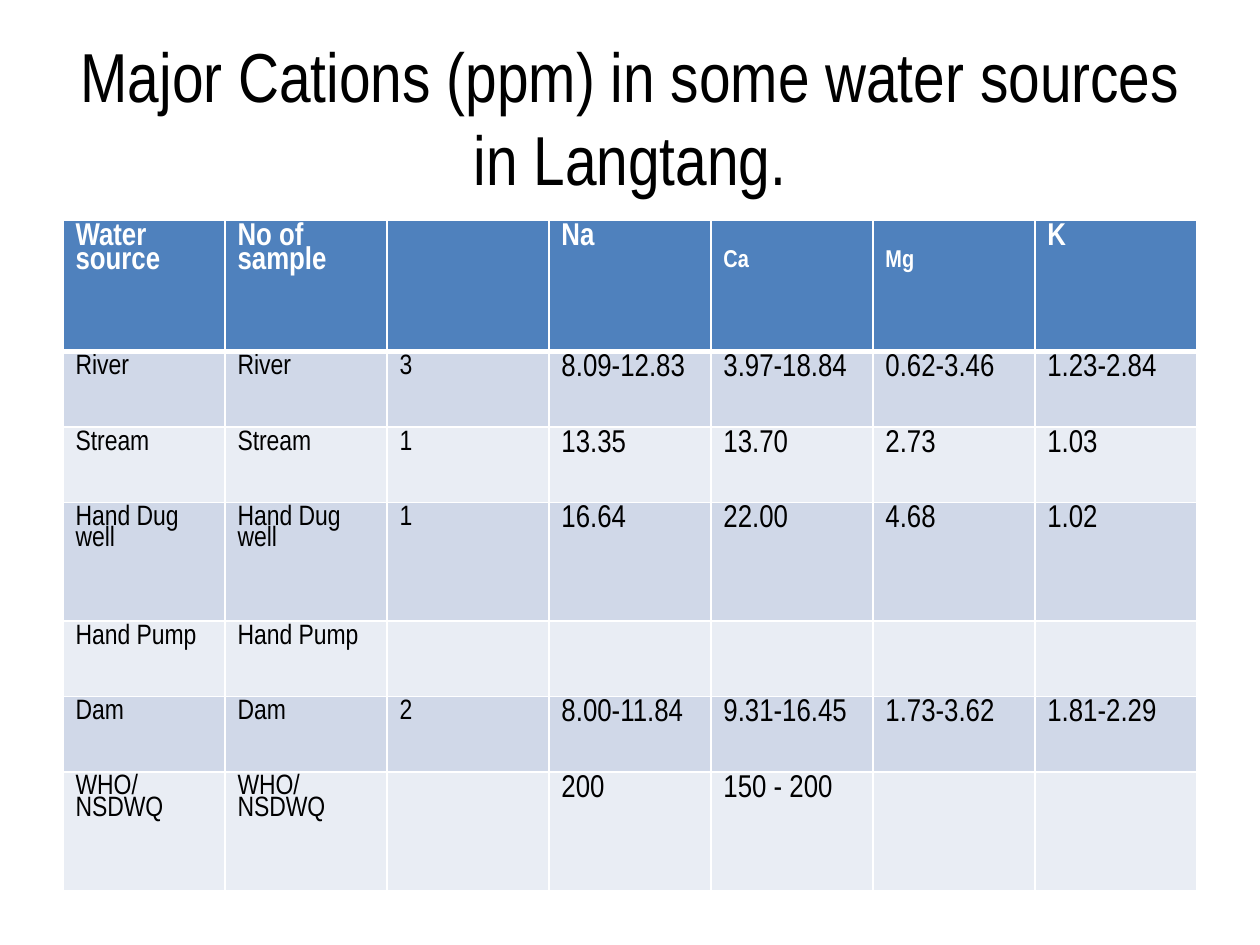
from lxml.etree import SubElement
from pptx import Presentation
from pptx.dml.color import RGBColor
from pptx.enum.text import MSO_ANCHOR, MSO_AUTO_SIZE, PP_ALIGN
from pptx.oxml.ns import qn
from pptx.util import Cm, Pt

BLACK = RGBColor(0x00, 0x00, 0x00)
WHITE = RGBColor(0xFF, 0xFF, 0xFF)
BLUE = RGBColor(0x4F, 0x81, 0xBD)
BANDS = (RGBColor(0xD0, 0xD8, 0xE8), RGBColor(0xE9, 0xED, 0xF4))

HEADER = ("Water source", "No of sample", "", "Na", "Ca", "Mg", "K")
SAMPLES = (
    ("River", "3", "8.09-12.83", "3.97-18.84", "0.62-3.46", "1.23-2.84"),
    ("Stream", "1", "13.35", "13.70", "2.73", "1.03"),
    ("Hand Dug well", "1", "16.64", "22.00", "4.68", "1.02"),
    ("Hand Pump", "", "", "", "", ""),
    ("Dam", "2", "8.00-11.84", "9.31-16.45", "1.73-3.62", "1.81-2.29"),
    ("WHO/NSDWQ", "", "200", "150 - 200", "", ""),
)
SUBSCRIPTS = ("Ca", "Mg")
LABEL_COLS = 3
ROW_HEIGHTS = (2.64, 1.52, 1.52, 2.39, 1.52, 1.52, 2.39)


class SlideBuilder:
    """Hold the style and current slide, and add each kind of element."""

    font = "Arial Narrow"
    line_spacing = 0.8

    def __init__(self, prs):
        self.s = prs.slides.add_slide(prs.slide_layouts[5])

    def add_text(self, p, text, size, color, bold=False):
        r = p.add_run()
        r.text = text
        for name, value in {"name": self.font, "size": Pt(size), "bold": bold}.items():
            setattr(r.font, name, value)
        r.font.color.rgb = color
        return r

    def title(self, text, left, top, width, height):
        sp = self.s.shapes.title
        box = {"left": left, "top": top, "width": width, "height": height}
        for name, value in box.items():
            setattr(sp, name, Cm(value))
        tf = sp.text_frame
        frame = {"word_wrap": True, "auto_size": MSO_AUTO_SIZE.NONE,
                 "vertical_anchor": MSO_ANCHOR.MIDDLE}
        for name, value in frame.items():
            setattr(tf, name, value)
        p = tf.paragraphs[0]
        p.alignment = PP_ALIGN.CENTER
        self.add_text(p, text, 39.6, BLACK)

    def borders(self, cell, widths):
        tc_pr = cell._tc.get_or_add_tcPr()
        for side, width in widths.items():
            ln = SubElement(tc_pr, qn(f"a:ln{side}"), w=str(Pt(width)))
            fill = SubElement(ln, qn("a:solidFill"))
            SubElement(fill, qn("a:srgbClr"), val=str(WHITE))

    def cell(self, cell, text, row, col):
        header = row == 0
        self.borders(cell, {"L": 1, "R": 1, "T": 3 if row == 1 else 1,
                            "B": 3 if header else 1})
        cell.fill.solid()
        cell.fill.fore_color.rgb = BLUE if header else BANDS[(row - 1) % 2]
        if not text:
            return
        p = cell.text_frame.paragraphs[0]
        p.line_spacing = self.line_spacing
        subscript = header and text in SUBSCRIPTS
        size = 24 if subscript else 18 if header or col >= LABEL_COLS else 16
        r = self.add_text(p, text, size, WHITE if header else BLACK, header)
        if subscript:
            r.font._element.set("baseline", "-25000")

    def table(self, rows, heights, left, top, width):
        frame = self.s.shapes.add_table(len(rows), len(rows[0]), Cm(left), Cm(top),
                                        Cm(width), Cm(sum(heights)))
        tbl = frame.table
        for col in tbl.columns:
            col.width = Cm(width / len(rows[0]))
        for i, (values, height) in enumerate(zip(rows, heights)):
            tbl.rows[i].height = Cm(height)
            for j, text in enumerate(values):
                self.cell(tbl.cell(i, j), text, i, j)


def main():
    prs = Presentation()
    prs.slide_width, prs.slide_height = Cm(25.4), Cm(19.05)
    slide = SlideBuilder(prs)
    slide.title("Major Cations (ppm) in some water sources in Langtang.",
                1.27, 0.76, 22.86, 3.18)
    rows = [HEADER] + [(source, source, *values) for source, *values in SAMPLES]
    slide.table(rows, ROW_HEIGHTS, 1.27, 4.45, 22.86)
    prs.save("out.pptx")


if __name__ == "__main__":
    main()
